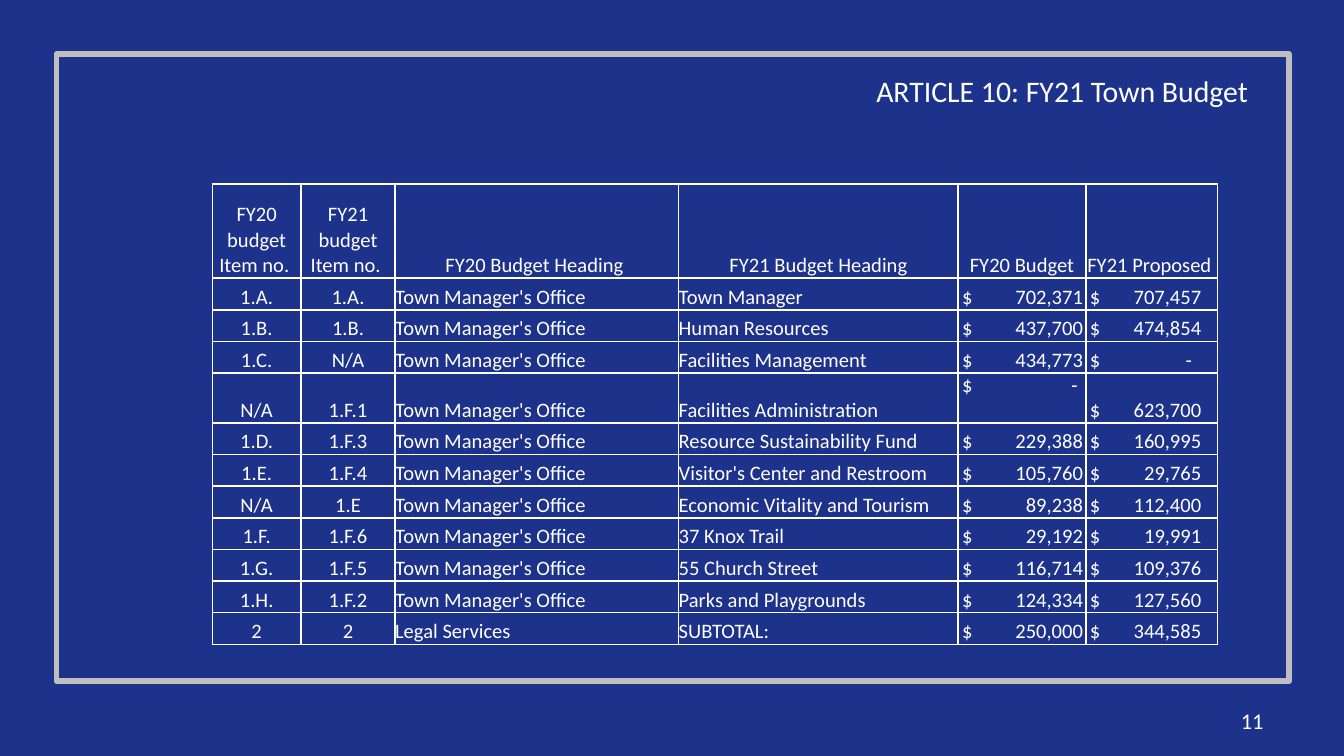
from lxml.etree import SubElement
from pptx import Presentation
from pptx.dml.color import RGBColor
from pptx.enum.shapes import MSO_SHAPE
from pptx.enum.text import MSO_ANCHOR, MSO_AUTO_SIZE, PP_ALIGN
from pptx.oxml.ns import qn
from pptx.util import Inches, Pt

WHITE = "FFFFFF"


def rgb(color):
    return RGBColor.from_string(color)


def write(frame, text, size=11, color=WHITE, align=PP_ALIGN.LEFT, tab=None):
    paragraph = frame.paragraphs[0]
    paragraph.alignment = align
    if tab:
        tabs = SubElement(paragraph._p.get_or_add_pPr(), qn("a:tabLst"))
        SubElement(tabs, qn("a:tab"), pos=str(Inches(tab)), algn="r")
    run = paragraph.add_run()
    run.text = text
    run.font.name = "Calibri"
    run.font.size = Pt(size)
    run.font.color.rgb = rgb(color)


# Widescreen slide, 16:9
prs = Presentation()
prs.slide_width, prs.slide_height = Inches(10), Inches(10 * 9 / 16)
slide = prs.slides.add_slide(prs.slide_layouts[5])
slide.background.fill.solid()
slide.background.fill.fore_color.rgb = rgb("1D328B")

# Frame
frame = slide.shapes.add_shape(
    MSO_SHAPE.RECTANGLE, Inches(0.42), Inches(0.4), Inches(9.17), Inches(4.67))
frame.shadow.inherit = False
frame.fill.background()
frame.line.color.rgb = rgb("BFBFBF")
frame.line.width = Pt(3)

# Title
title = slide.shapes.title
title.left, title.top = Inches(6.42), Inches(0.49)
title.width, title.height = Inches(3.08), Inches(0.37)
title.text_frame.auto_size = MSO_AUTO_SIZE.NONE
title.text_frame.vertical_anchor = MSO_ANCHOR.TOP
write(title.text_frame, "ARTICLE 10: FY21 Town Budget", size=16)

# Page number
page_number = slide.shapes.add_textbox(
    Inches(7.17), Inches(5.21), Inches(2.33), Inches(0.3))
page_number.text_frame.word_wrap = True
page_number.text_frame.vertical_anchor = MSO_ANCHOR.MIDDLE
write(page_number.text_frame, "11", size=12, align=PP_ALIGN.RIGHT)

# Budget table
office = "Town Manager's Office"
budget_rows = [
    ("FY20 budget Item no. ", "FY21 budget Item no. ", "FY20 Budget Heading ",
     "FY21 Budget Heading", "FY20 Budget", "FY21 Proposed "),
    ("1.A.", "1.A.", office, "Town Manager", "702,371", "707,457"),
    ("1.B.", "1.B.", office, "Human Resources", "437,700", "474,854"),
    ("1.C.", "N/A", office, "Facilities Management", "434,773", "-"),
    ("N/A", "1.F.1", office, "Facilities Administration", "-", "623,700"),
    ("1.D.", "1.F.3", office, "Resource Sustainability Fund", "229,388", "160,995"),
    ("1.E.", "1.F.4", office, "Visitor's Center and Restroom", "105,760", "29,765"),
    ("N/A", "1.E", office, "Economic Vitality and Tourism", "89,238", "112,400"),
    ("1.F.", "1.F.6", office, "37 Knox Trail", "29,192", "19,991"),
    ("1.G.", "1.F.5", office, "55 Church Street", "116,714", "109,376"),
    ("1.H.", "1.F.2", office, "Parks and Playgrounds", "124,334", "127,560"),
    ("2", "2", "Legal Services", "SUBTOTAL:", "250,000", "344,585"),
]
column_widths = [0.66, 0.7, 2.11, 2.08, 0.95, 0.98]
amount_tabs = {4: 0.9, 5: 0.83}
dash_tabs = {4: 0.86, 5: 0.76}
header_height, tall_height, tall_row = 0.7, 0.37, 4
row_height = (3.29 - header_height) / 11

budget = slide.shapes.add_table(
    len(budget_rows), len(column_widths),
    Inches(1.58), Inches(1.37), Inches(7.48), Inches(3.29)).table
budget.first_row = budget.horz_banding = False
for column, width in zip(budget.columns, column_widths):
    column.width = Inches(width)

for r, values in enumerate(budget_rows):
    budget.rows[r].height = Inches(
        {0: header_height, tall_row: tall_height}.get(r, row_height))
    for c, value in enumerate(values):
        cell = budget.cell(r, c)
        cell.margin_left = cell.margin_right = 0
        cell.margin_top = cell.margin_bottom = 0
        cell.vertical_anchor = MSO_ANCHOR.BOTTOM

        # White borders, then no fill
        for side in ("a:lnL", "a:lnR", "a:lnT", "a:lnB"):
            border = SubElement(cell._tc.get_or_add_tcPr(), qn(side), w=str(Pt(1)))
            SubElement(SubElement(border, qn("a:solidFill")), qn("a:srgbClr"), val=WHITE)
        cell.fill.background()

        if r > 0 and c in amount_tabs:
            cell.margin_left = Inches(0.03)
            if r == tall_row and value == "-":
                cell.vertical_anchor = MSO_ANCHOR.TOP
            stops = dash_tabs if value == "-" else amount_tabs
            write(cell.text_frame, "$\t" + value, tab=stops[c])
        else:
            centered = r == 0 or c < 2
            write(cell.text_frame, value,
                  align=PP_ALIGN.CENTER if centered else PP_ALIGN.LEFT)

prs.save("out.pptx")
